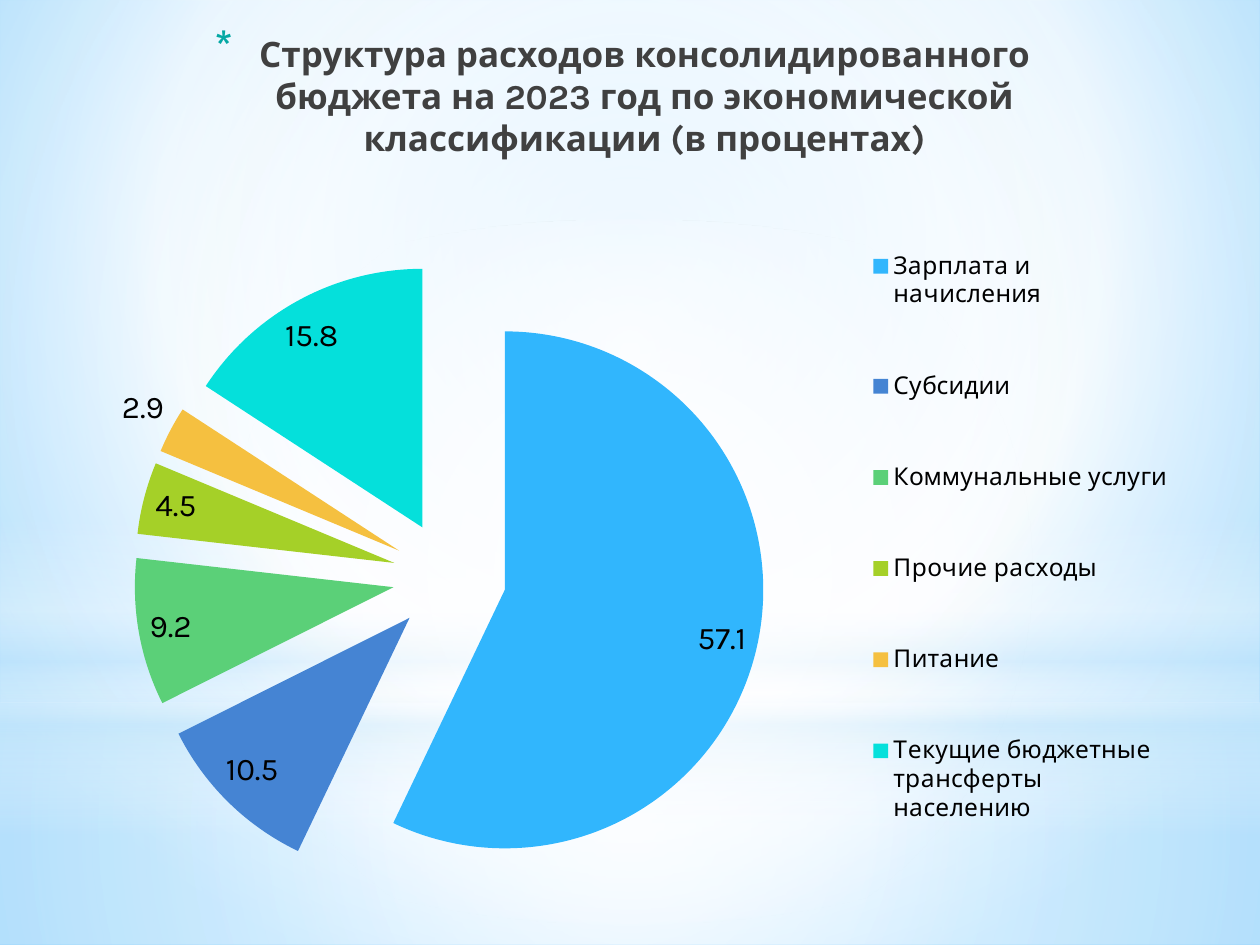
"""Build a slide with an exploded pie chart of consolidated budget spending."""
import lxml.etree
import pptx
import pptx.chart.data
import pptx.dml.color
import pptx.enum.chart
import pptx.enum.shapes
import pptx.enum.text
import pptx.oxml
import pptx.oxml.ns
import pptx.util

PX = 914400 / 126
FONT = "Karla"
qn = pptx.oxml.ns.qn


def color(hex_value):
    return pptx.dml.color.RGBColor.from_string(hex_value)


def set_gradient(owner, stops, focus=None):
    """Swap the solid fill of owner for a circular or vertical gradient."""
    solid = owner.find(qn("a:solidFill"))
    gradient = lxml.etree.Element(qn("a:gradFill"), rotWithShape="1")
    stop_list = lxml.etree.SubElement(gradient, qn("a:gsLst"))
    for position, hex_value, opacity in stops:
        stop = lxml.etree.SubElement(stop_list, qn("a:gs"), pos=str(position * 1000))
        tint = lxml.etree.SubElement(stop, qn("a:srgbClr"), val=hex_value)
        if opacity < 100:
            lxml.etree.SubElement(tint, qn("a:alpha"), val=str(opacity * 1000))
    if focus:
        circle = lxml.etree.SubElement(gradient, qn("a:path"), path="circle")
        edges = {side: str(share * 1000) for side, share in zip("ltrb", focus)}
        lxml.etree.SubElement(circle, qn("a:fillToRect"), **edges)
    else:
        lxml.etree.SubElement(gradient, qn("a:lin"), ang="5400000", scaled="0")
    owner.replace(solid, gradient)


prs = pptx.Presentation()
prs.slide_width = round(1260 * PX)
prs.slide_height = round(945 * PX)
slide = prs.slides.add_slide(prs.slide_layouts[5])

slide.background.fill.solid()
backdrop = slide.element.find(".//" + qn("p:bgPr"))
set_gradient(backdrop, [(0, "B0E0FF", 100), (60, "FFFFFF", 100), (100, "6BC5FF", 100)],
             (20, 10, 20, 60))

CENTER = (50, 50, 50, 50)
RECT = pptx.enum.shapes.MSO_SHAPE.RECTANGLE
OVAL = pptx.enum.shapes.MSO_SHAPE.OVAL
glows = [
    (RECT, 703, 242, CENTER, [(0, "FFFFFF", 91), (37, "FFFFFF", 76), (100, "C6E7FC", 79)]),
    (RECT, 0, 703, CENTER, [(0, "FFFFFF", 89), (48, "FFFFFF", 62), (100, "C6E7FC", 79)]),
    (RECT, 519, 315, None, [(0, "FFFFFF", 0), (29, "FFFFFF", 30), (45, "C6E7FC", 40),
                            (55, "FFFFFF", 26), (65, "C6E7FC", 60), (100, "FFFFFF", 0)]),
    (OVAL, 220, 703, CENTER, [(0, "FFFFFF", 100), (56, "FFFFFF", 0)]),
]
for outline, top, height, focus, stops in glows:
    glow = slide.shapes.add_shape(outline, 0, round(top * PX), prs.slide_width, round(height * PX))
    glow.shadow.inherit = False
    glow.line.fill.background()
    glow.fill.solid()
    set_gradient(glow.element.spPr, stops, focus)

heading = slide.shapes.title
heading.element.getparent().append(heading.element)
heading.left, heading.top, heading.width, heading.height = [
    round(length * PX) for length in (174, 26, 897, 158)]
heading.text_frame.word_wrap = True
heading.text_frame.auto_size = pptx.enum.text.MSO_AUTO_SIZE.NONE
heading.text_frame.vertical_anchor = pptx.enum.text.MSO_ANCHOR.TOP
line = heading.text_frame.paragraphs[0]
line.alignment = pptx.enum.text.PP_ALIGN.CENTER
line.line_spacing = 1.0
run = line.add_run()
run.text = ("Структура расходов консолидированного бюджета на 2023 год "
            "по экономической классификации (в процентах)")
run.font.name = FONT
run.font.size = pptx.util.Pt(20)
run.font.bold = True
run.font.color.rgb = color("404040")
bullet = line._p.get_or_add_pPr()
bullet.set("marL", str(round(44 * PX)))
bullet.set("indent", str(round(-44 * PX)))
bullet_color = lxml.etree.SubElement(bullet, qn("a:buClr"))
lxml.etree.SubElement(bullet_color, qn("a:srgbClr"), val="04A8A4")
lxml.etree.SubElement(bullet, qn("a:buSzPct"), val="128000")
lxml.etree.SubElement(bullet, qn("a:buChar"), char="*")

spending = [
    ("Зарплата и начисления", 57.1, "31B6FD"),
    ("Субсидии ", 10.5, "4584D3"),
    ("Коммунальные услуги", 9.2, "5BD078"),
    ("Прочие расходы", 4.5, "A5D028"),
    ("Питание", 2.9, "F5C040"),
    ("Текущие бюджетные трансферты населению", 15.8, "05E0DB"),
]
budget = pptx.chart.data.CategoryChartData(number_format="0.0")
budget.categories = [name for name, share, tint in spending]
budget.add_series("Series 1", [share for name, share, tint in spending])
pie = slide.shapes.add_chart(
    pptx.enum.chart.XL_CHART_TYPE.PIE_EXPLODED,
    *[round(length * PX) for length in (44, 175, 1142, 725)], budget).chart
pie.has_title = False
pie.font.name = FONT
pie.font.size = pptx.util.Pt(18)
pie.font.color.rgb = color("000000")
pie.has_legend = True
pie.legend.position = pptx.enum.chart.XL_LEGEND_POSITION.RIGHT
pie.legend.include_in_layout = False
pie.legend.font.size = pptx.util.Pt(14)
pie.legend.font.name = FONT
pie.legend.font.color.rgb = color("000000")

plot = pie.plots[0]
plot.vary_by_categories = True
plot.has_data_labels = True
labels = plot.data_labels
labels.show_value = True
labels.show_percentage = False
labels.number_format = "0.0"
labels.number_format_is_linked = False
labels.position = pptx.enum.chart.XL_LABEL_POSITION.BEST_FIT
shares = plot.series[0]
for index, (name, share, tint) in enumerate(spending):
    slice_fill = shares.points[index].format.fill
    slice_fill.solid()
    slice_fill.fore_color.rgb = color(tint)
for explosion in shares._element.iter(qn("c:explosion")):
    explosion.set("val", "22")

plot_area = pie._chartSpace.find(".//" + qn("c:plotArea"))
legend_box = pie._chartSpace.find(".//" + qn("c:legend"))
frames = [(plot_area, 0, (0.01, 0.12, 0.69, 0.87), True),
          (legend_box, 1, (0.72, 0.02, 0.27, 0.96), False)]
for owner, place, box, is_inner in frames:
    for old in owner.findall(qn("c:layout")):
        owner.remove(old)
    layout = lxml.etree.Element(qn("c:layout"))
    manual = lxml.etree.SubElement(layout, qn("c:manualLayout"))
    if is_inner:
        lxml.etree.SubElement(manual, qn("c:layoutTarget"), val="inner")
    for mode in ("xMode", "yMode"):
        lxml.etree.SubElement(manual, qn("c:" + mode), val="edge")
    for side, value in zip("xywh", box):
        lxml.etree.SubElement(manual, qn("c:" + side), val=str(value))
    owner.insert(place, layout)

prs.save("out.pptx")
